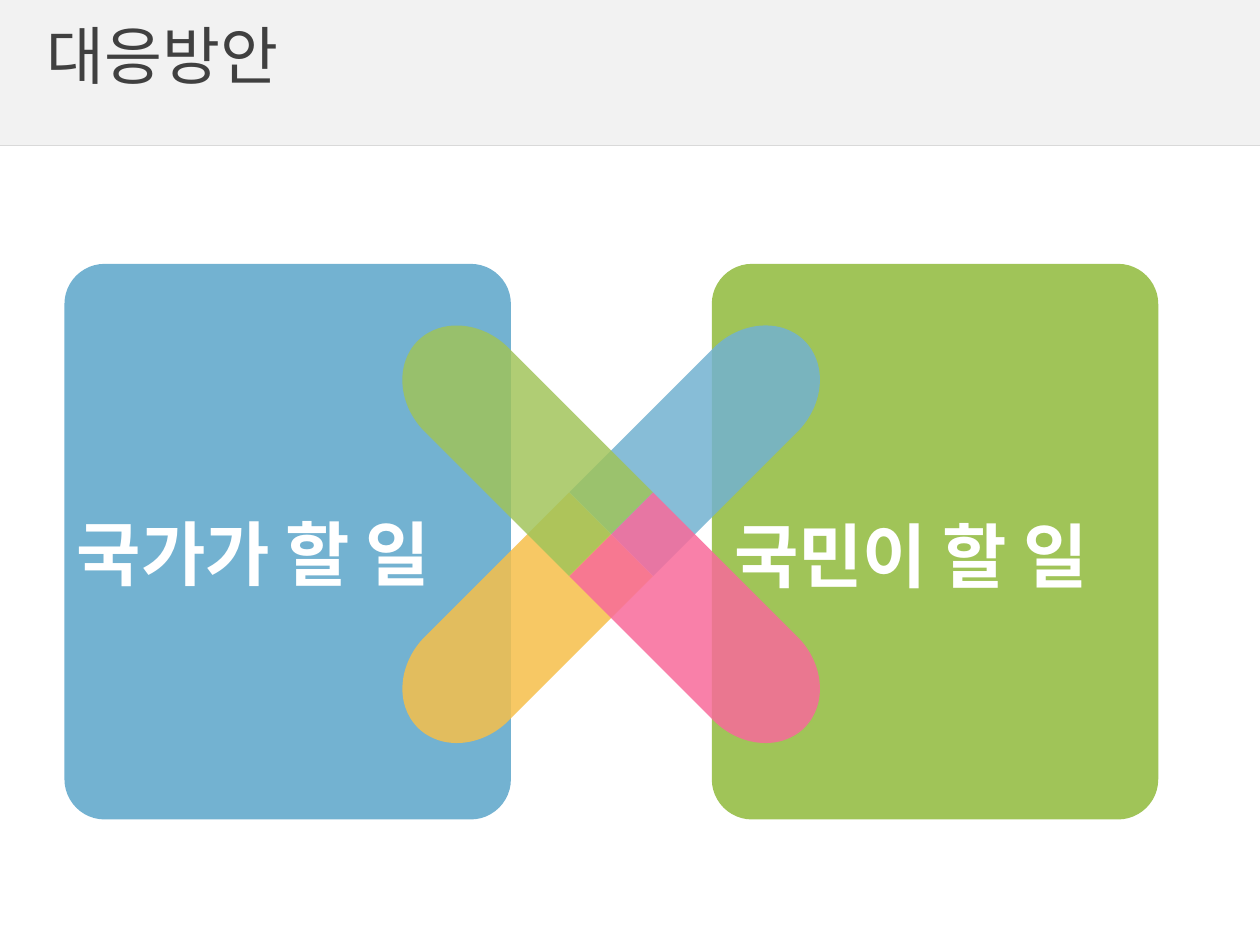
from lxml import etree
from pptx import Presentation
from pptx.dml.color import RGBColor
from pptx.enum.shapes import MSO_CONNECTOR, MSO_SHAPE
from pptx.enum.text import MSO_ANCHOR
from pptx.oxml.ns import qn
from pptx.util import Cm, Pt

RECT = MSO_SHAPE.RECTANGLE
ROUND = MSO_SHAPE.ROUNDED_RECTANGLE
LINE = MSO_CONNECTOR.STRAIGHT
TOP = MSO_ANCHOR.TOP
MIDDLE = MSO_ANCHOR.MIDDLE

WIDE, HIGH = 25.4, 19.05
BAND = 2.93
KOREAN = "Noto Sans CJK KR"
BLUE, GREEN, GOLD, PINK = "73B2D1", "A0C458", "F6BF4A", "F86A9A"


def color(code):
    return RGBColor.from_string(code)


class Deck:
    def __init__(self):
        self.show = Presentation()
        self.show.slide_width = Cm(WIDE)
        self.show.slide_height = Cm(HIGH)
        self.slide = self.show.slides.add_slide(self.show.slide_layouts[6])
        self.shapes = self.slide.shapes

    def paint(self, shape, fill):
        shape.shadow.inherit = False
        shape.fill.solid()
        shape.fill.fore_color.rgb = color(fill)
        shape.line.fill.background()

    def box(self, kind, left, top, width, height, fill):
        shape = self.shapes.add_shape(
            kind, Cm(left), Cm(top), Cm(width), Cm(height))
        self.paint(shape, fill)
        return shape

    def card(self, left, top, width, height, fill):
        shape = self.box(ROUND, left, top, width, height, fill)
        shape.adjustments[0] = 0.09

    def rule(self, left, right, top, tint):
        line = self.shapes.add_connector(
            LINE, Cm(left), Cm(top), Cm(right), Cm(top))
        line.line.color.rgb = color(tint)
        line.line.width = Pt(0.75)
        etree.SubElement(line._element.spPr, qn("a:effectLst"))

    def text(self, words, left, top, width, height, size, tint,
             face=KOREAN, east=None, bold=False, anchor=TOP, inset=None):
        area = self.shapes.add_textbox(
            Cm(left), Cm(top), Cm(width), Cm(height))
        frame = area.text_frame
        frame.word_wrap = True
        frame.vertical_anchor = anchor
        if inset is not None:
            frame.margin_left = frame.margin_right = Cm(inset)
            frame.margin_top = frame.margin_bottom = Cm(inset)
        frame.text = words
        font = frame.paragraphs[0].runs[0].font
        font.size = Pt(size)
        font.bold = bold
        font.name = face
        font.color.rgb = color(tint)
        if east:
            mark = etree.SubElement(font._element, qn("a:ea"))
            mark.set("typeface", east)

    def bend(self, step, *guides):
        step.tag = qn("a:cubicBezTo")
        for spot, (x, y) in enumerate(guides):
            point = etree.Element(qn("a:pt"), x=str(Cm(x)), y=str(Cm(y)))
            step.insert(spot, point)

    def arm(self, mid, level, turn, fill, alpha):
        width, height, cap, pull = 2.39, 5.51, 1.4, 0.55
        half = width / 2
        points = [(0, cap), (half, 0), (width, cap),
                  (width, height), (0, height)]
        spots = [(Cm(x), Cm(y)) for x, y in points]
        build = self.shapes.build_freeform(*spots[0])
        build.add_line_segments(spots[1:], close=True)
        shape = build.convert_to_shape(
            Cm(mid - half), Cm(level - height / 2))
        shape.rotation = turn
        self.paint(shape, fill)
        steps = list(shape._element.iter(qn("a:lnTo")))
        rise, reach = cap * (1 - pull), half * pull
        self.bend(steps[0], (0, rise), (half - reach, 0))
        self.bend(steps[1], (half + reach, 0), (width, rise))
        tone = shape._element.spPr.find(qn("a:solidFill"))[0]
        etree.SubElement(tone, qn("a:alpha")).set("val", str(alpha * 1000))


def main():
    deck = Deck()
    deck.box(RECT, 0, 0, WIDE, BAND, "F2F2F2")
    deck.rule(0, WIDE, BAND, "D9D9D9")
    deck.text("대응방안", 0.94, 0.33, 23.55, 1.52, 36, "404040",
              face="Calibri", east=KOREAN, anchor=MIDDLE, inset=0)

    cards = [
        (14.35, GREEN, "국민이 할 일", 14.55, 10.21, 8.61),
        (1.3, BLUE, "국가가 할 일", 1.3, 10.17, 10.39),
    ]
    for left, fill, words, start, top, width in cards:
        deck.card(left, 5.32, 9, 11.2, fill)
        deck.text(words, start, top, width, 1.96, 40, "FFFFFF", bold=True)

    mid, level, shift = 12.32, 10.77, 1.95
    arms = [
        (1, -1, 45, BLUE, 85),
        (-1, 1, 225, GOLD, 85),
        (-1, -1, 315, GREEN, 83),
        (1, 1, 135, PINK, 85),
    ]
    for across, down, turn, fill, alpha in arms:
        deck.arm(mid + across * shift, level + down * shift,
                 turn, fill, alpha)
    deck.show.save("out.pptx")


if __name__ == "__main__":
    main()
